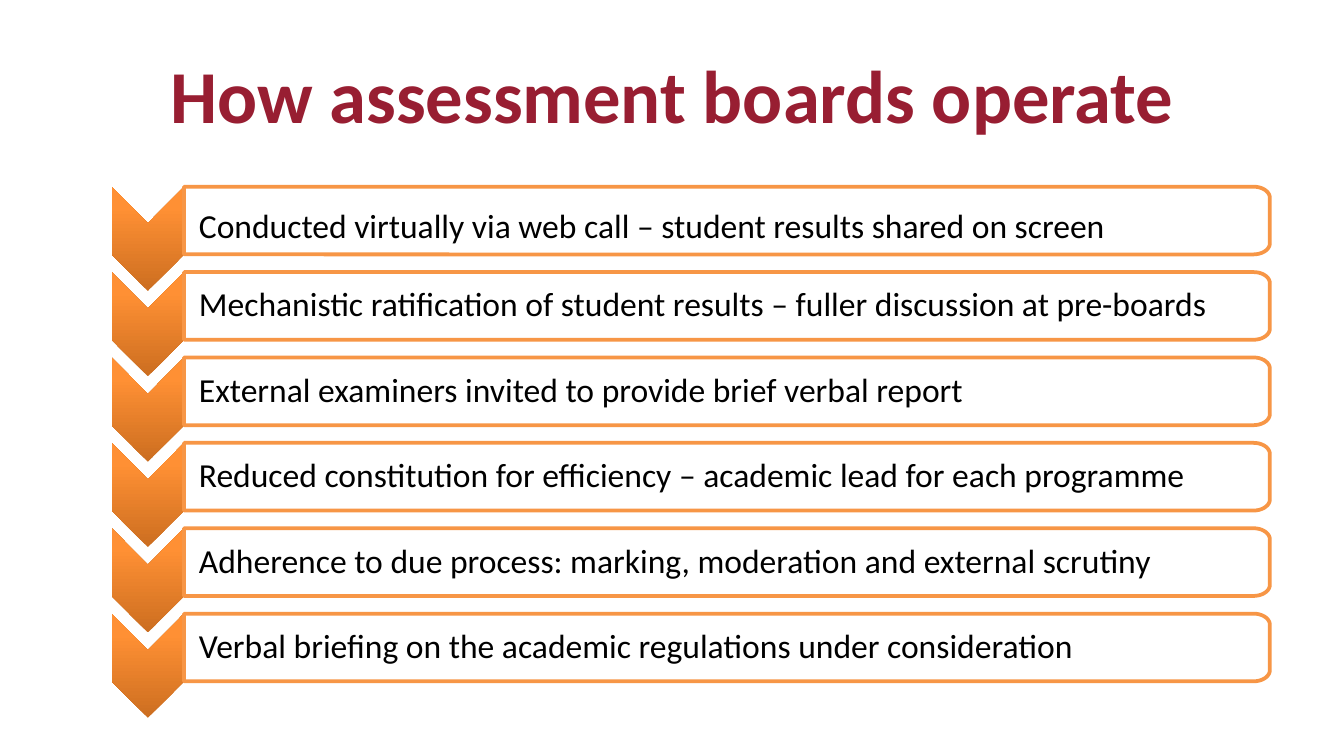
import copy
import math

from pptx import Presentation
from pptx import util as u
from pptx.dml.color import RGBColor
from pptx.enum import text
from pptx.oxml.ns import qn

CRIMSON = RGBColor(0x98, 0x1E, 0x32)
ORANGE = RGBColor(0xF7, 0x96, 0x46)
BLACK = RGBColor(0, 0, 0)
WHITE = RGBColor(0xFF, 0xFF, 0xFF)
CHEVRON_STOPS = [
    (0, RGBColor(0xCC, 0x6E, 0x20)),
    (0.8, RGBColor(0xFF, 0x90, 0x34)),
    (1, RGBColor(0xFF, 0x91, 0x36)),
]

# Lengths in centimetres
TOP, PITCH = 3.53, 1.614
CHEVRON_LEFT, CHEVRON_WIDTH, NOTCH = 2.11, 1.37, 0.69
BAR_LEFT, BAR_WIDTH, BAR_HEIGHT = 3.48, 20.52, 1.28
CORNER_X, CORNER_Y = 0.31, 0.21

PRACTICES = [
    "Conducted virtually via web call – student results shared on screen",
    "Mechanistic ratification of student results – fuller discussion at pre-boards",
    "External examiners invited to provide brief verbal report",
    "Reduced constitution for efficiency – academic lead for each programme",
    "Adherence to due process: marking, moderation and external scrutiny",
    "Verbal briefing on the academic regulations under consideration",
]


def write(frame, wording, size=18, color=BLACK, bold=False,
          align=text.PP_ALIGN.LEFT, line_spacing=None, after=None):
    frame.word_wrap = True
    frame.vertical_anchor = text.MSO_ANCHOR.MIDDLE
    paragraph = frame.paragraphs[0]
    paragraph.text = wording
    paragraph.alignment = align
    paragraph.line_spacing = line_spacing
    paragraph.space_after = after
    font = paragraph.font
    font.name, font.size, font.bold = "Calibri", u.Pt(size), bold
    font.color.rgb = color


class BoardSlide:
    def __init__(self, deck):
        self.slide = deck.slides.add_slide(deck.slide_layouts[5])

    def title(self, wording):
        heading = self.slide.shapes.title
        heading.left, heading.top = u.Cm(1.27), u.Cm(0.58)
        heading.width, heading.height = u.Cm(22.86), u.Cm(2.38)
        write(heading.text_frame, wording, size=40, color=CRIMSON, bold=True,
              align=text.PP_ALIGN.CENTER)

    def outline(self, points):
        """Draw a closed polygon through points given in centimetres."""
        corners = [(u.Cm(x), u.Cm(y)) for x, y in points]
        builder = self.slide.shapes.build_freeform(*corners[0])
        builder.add_line_segments(corners[1:], close=True)
        polygon = builder.convert_to_shape()
        polygon.shadow.inherit = False
        return polygon

    def chevron(self, top):
        left, right = CHEVRON_LEFT, CHEVRON_LEFT + CHEVRON_WIDTH
        middle, bottom = (left + right) / 2, top + BAR_HEIGHT
        arrow = self.outline([
            (right, top), (right, bottom), (middle, bottom + NOTCH),
            (left, bottom), (left, top), (middle, top + NOTCH),
        ])
        arrow.line.fill.background()
        arrow.fill.gradient()
        arrow.fill.gradient_angle = 90
        stop_list = arrow.element.find(".//" + qn("a:gsLst"))
        stop_list.append(copy.deepcopy(stop_list[-1]))
        for stop, (position, color) in zip(arrow.fill.gradient_stops, CHEVRON_STOPS):
            stop.position = position
            stop.color.rgb = color

    def bar(self, top, wording, **style):
        """Draw a box rounded at its right-hand corners only."""
        right, bottom = BAR_LEFT + BAR_WIDTH, top + BAR_HEIGHT
        angles = [math.radians(degrees) for degrees in range(0, 91, 10)]
        upper = [(right - CORNER_X * (1 - math.sin(a)),
                  top + CORNER_Y * (1 - math.cos(a))) for a in angles]
        lower = [(x, top + bottom - y) for x, y in reversed(upper)]
        box = self.outline([(BAR_LEFT, top), *upper, *lower, (BAR_LEFT, bottom)])
        box.fill.solid()
        box.fill.fore_color.rgb = WHITE
        box.line.color.rgb = ORANGE
        box.line.width = u.Pt(2)
        frame = box.text_frame
        frame.margin_left = u.Cm(0.28)
        frame.margin_top = frame.margin_right = frame.margin_bottom = u.Cm(0.08)
        write(frame, wording, **style)


def main():
    deck = Presentation()
    deck.slide_width, deck.slide_height = u.Cm(25.4), u.Cm(14.29)
    board = BoardSlide(deck)
    board.title("How assessment boards operate")
    for row, practice in enumerate(PRACTICES):
        top = TOP + row * PITCH
        board.chevron(top)
        if row == 0:
            board.bar(top, practice, line_spacing=1.2)
        else:
            board.bar(top, practice, line_spacing=0.9, after=u.Pt(2.7))
    deck.save("out.pptx")


if __name__ == "__main__":
    main()
